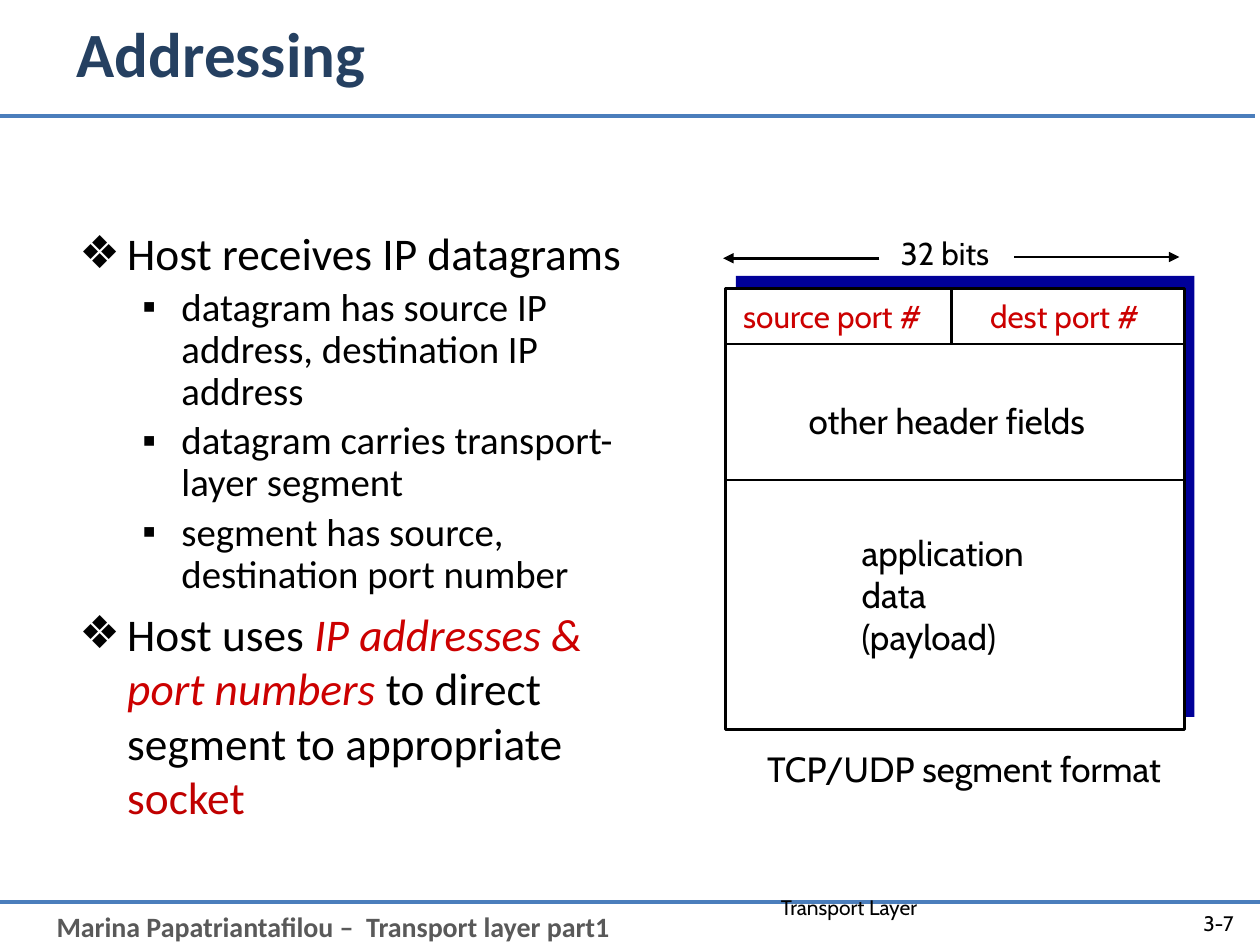
from dataclasses import dataclass

from lxml import etree
from pptx import Presentation
from pptx.dml.color import RGBColor
from pptx.enum.shapes import MSO_CONNECTOR, MSO_SHAPE
from pptx.enum.text import MSO_ANCHOR, MSO_AUTO_SIZE, PP_ALIGN
from pptx.oxml.ns import qn
from pptx.slide import Slide
from pptx.text.text import _Paragraph
from pptx.util import Inches, Pt

STRAIGHT = MSO_CONNECTOR.STRAIGHT
RECTANGLE = MSO_SHAPE.RECTANGLE
LEFT, RIGHT = PP_ALIGN.LEFT, PP_ALIGN.RIGHT
TOP, MIDDLE = MSO_ANCHOR.TOP, MSO_ANCHOR.MIDDLE

BLACK = RGBColor(0, 0, 0)
WHITE = RGBColor(255, 255, 255)
RED = RGBColor(0xCC, 0, 0)
DARK_RED = RGBColor(0xC0, 0, 0)
NAVY = RGBColor(0, 0, 0x99)
TITLE_BLUE = RGBColor(0x25, 0x40, 0x61)
RULE_BLUE = RGBColor(0x4B, 0x7E, 0xBC)
GREY = RGBColor(0x59, 0x59, 0x59)


@dataclass
class Label:
    text: str
    left: float
    top: float
    width: float
    height: float
    size: float
    color: RGBColor = BLACK
    font: str = "Cabin"
    bold: bool = False
    wrap: bool = False
    align: PP_ALIGN = LEFT
    anchor: MSO_ANCHOR = TOP


@dataclass
class Line:
    start: tuple[float, float]
    end: tuple[float, float]
    color: RGBColor = BLACK
    weight: float = 1.5
    arrow: bool = False


@dataclass
class Span:
    text: str
    color: RGBColor = BLACK
    italic: bool = False


@dataclass
class BulletStyle:
    symbol: str
    level: int
    margin: float
    hanging: float
    size: float
    line_spacing: float


MAIN = BulletStyle("❖", 0, 0.38, 0.38, 25.9, 1.0)
SUB = BulletStyle("▪", 1, 0.81, 0.31, 22.2, 0.9)

BULLETS = [
    (MAIN, [Span("Host receives IP datagrams")]),
    (SUB, [Span("datagram has source IP address, destination IP address")]),
    (SUB, [Span("datagram carries transport-layer segment")]),
    (SUB, [Span("segment has source, destination port number")]),
    (MAIN, [
        Span("Host uses "),
        Span("IP addresses & port numbers", RED, True),
        Span(" to direct segment to appropriate "),
        Span("socket", DARK_RED),
    ]),
]

# Segment diagram
SEGMENT_LEFT, SEGMENT_TOP = 5.76, 2.29
SEGMENT_WIDTH, SEGMENT_HEIGHT = 3.64, 3.5
SEGMENT_RIGHT = SEGMENT_LEFT + SEGMENT_WIDTH
PORTS_BOTTOM, HEADER_BOTTOM, PORT_DIVIDER = 2.73, 3.81, 7.55

RULES = [
    Line((0, 7.16), (10, 7.16), RULE_BLUE, 2.25),
    Line((-0.04, 0.92), (9.96, 0.92), RULE_BLUE, 2.25),
]
SEGMENT_LINES = [
    Line((SEGMENT_LEFT, PORTS_BOTTOM), (SEGMENT_RIGHT, PORTS_BOTTOM)),
    Line((SEGMENT_LEFT, HEADER_BOTTOM), (SEGMENT_RIGHT, HEADER_BOTTOM)),
    Line((PORT_DIVIDER, PORTS_BOTTOM), (PORT_DIVIDER, SEGMENT_TOP)),
    Line((8.05, 2.04), (9.36, 2.04), arrow=True),
    Line((6.98, 2.05), (5.74, 2.05), arrow=True),
]
LABELS = [
    Label("Marina Papatriantafilou –  Transport layer part1", 0.35, 7.17, 9.25, 0.37,
          16, GREY, "Calibri", bold=True, wrap=True),
    Label("Transport Layer", 6.1, 7.05, 3.17, 0.31, 12, wrap=True),
    Label("3-7", 9.09, 7.13, 0.8, 0.4, 12, wrap=True, align=RIGHT, anchor=MIDDLE),
    Label("source port #", 5.8, 2.31, 1.71, 0.4, 18, RED),
    Label("dest port #", 7.76, 2.31, 1.45, 0.4, 18, RED),
    Label("32 bits", 7.05, 1.81, 0.94, 0.4, 18),
    Label("application\ndata\n(payload)", 6.74, 4.17, 1.52, 1.1, 20),
    Label("other header fields", 6.32, 3.12, 2.51, 0.43, 20),
    Label("TCP/UDP segment format", 5.99, 5.88, 3.35, 0.43, 20),
]


def place(shape, left: float, top: float, width: float, height: float) -> None:
    shape.left, shape.top = Inches(left), Inches(top)
    shape.width, shape.height = Inches(width), Inches(height)


def style_font(paragraph: _Paragraph, name: str, size: float, color: RGBColor,
               bold: bool = False) -> None:
    font = paragraph.font
    font.name, font.size, font.bold = name, Pt(size), bold
    font.color.rgb = color


def add_line(slide: Slide, line: Line) -> None:
    points = [Inches(value) for value in (*line.start, *line.end)]
    connector = slide.shapes.add_connector(STRAIGHT, *points)
    connector.line.color.rgb = line.color
    connector.line.width = Pt(line.weight)
    if line.arrow:
        etree.SubElement(connector.line._get_or_add_ln(), qn("a:tailEnd"), type="triangle")
    etree.SubElement(connector._element.spPr, qn("a:effectLst"))


def add_label(slide: Slide, label: Label) -> None:
    box = slide.shapes.add_textbox(Inches(label.left), Inches(label.top),
                                   Inches(label.width), Inches(label.height))
    frame = box.text_frame
    frame.word_wrap = label.wrap
    frame.vertical_anchor = label.anchor
    frame.text = label.text
    for paragraph in frame.paragraphs:
        paragraph.alignment = label.align
        style_font(paragraph, label.font, label.size, label.color, label.bold)


def add_segment_box(slide: Slide, left: float, top: float, fill: RGBColor):
    box = slide.shapes.add_shape(RECTANGLE, Inches(left), Inches(top),
                                 Inches(SEGMENT_WIDTH), Inches(SEGMENT_HEIGHT))
    box.shadow.inherit = False
    box.fill.solid()
    box.fill.fore_color.rgb = fill
    box.line.fill.background()
    return box


def write_bullet(paragraph: _Paragraph, style: BulletStyle, spans: list[Span]) -> None:
    paragraph.level = style.level
    properties = paragraph._p.get_or_add_pPr()
    properties.set("marL", str(Inches(style.margin)))
    properties.set("indent", str(-Inches(style.hanging)))
    etree.SubElement(properties, qn("a:buChar"), char=style.symbol)
    paragraph.line_spacing = style.line_spacing
    paragraph.space_before = Pt(round(style.size * 0.2, 1))
    style_font(paragraph, "Calibri", style.size, BLACK)
    for span in spans:
        run = paragraph.add_run()
        run.text = span.text
        run.font.color.rgb = span.color
        run.font.italic = span.italic


def main() -> None:
    deck = Presentation()
    deck.slide_width, deck.slide_height = Inches(10), Inches(7.5)
    slide = deck.slides.add_slide(deck.slide_layouts[1])

    title = slide.shapes.title
    place(title, 0.51, 0, 8.99, 0.83)
    title.text_frame.text = "Addressing"
    title.text_frame.vertical_anchor = MIDDLE
    heading = title.text_frame.paragraphs[0]
    heading.alignment = LEFT
    style_font(heading, "Calibri", 36, TITLE_BLUE, bold=True)

    body = slide.placeholders[1]
    place(body, 0.53, 1.74, 4.85, 4.71)
    frame = body.text_frame
    frame.auto_size = MSO_AUTO_SIZE.NONE
    for index, (style, spans) in enumerate(BULLETS):
        paragraph = frame.add_paragraph() if index else frame.paragraphs[0]
        write_bullet(paragraph, style, spans)

    add_segment_box(slide, SEGMENT_LEFT + 0.08, SEGMENT_TOP - 0.1, NAVY)
    segment = add_segment_box(slide, SEGMENT_LEFT, SEGMENT_TOP, WHITE)
    segment.line.color.rgb = BLACK
    segment.line.width = Pt(1.5)

    for line in RULES + SEGMENT_LINES:
        add_line(slide, line)
    for label in LABELS:
        add_label(slide, label)
    deck.save("out.pptx")


if __name__ == "__main__":
    main()
